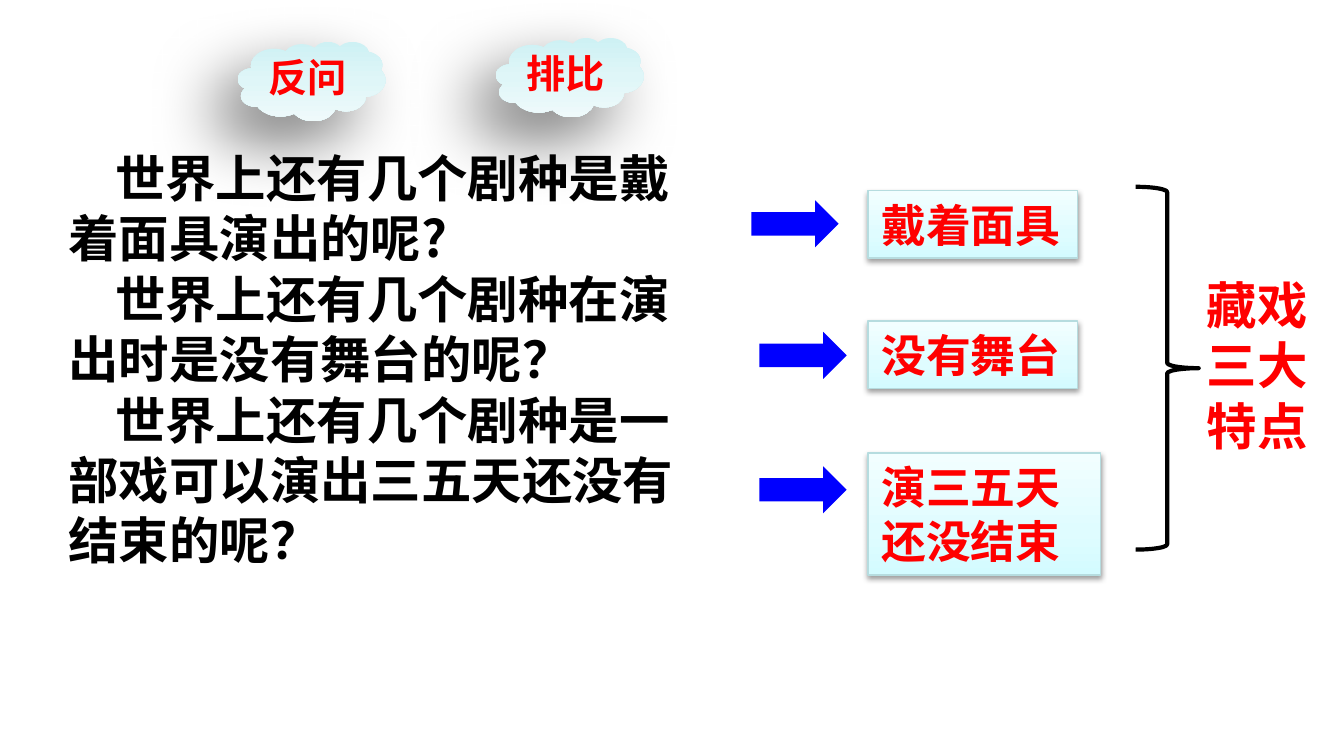
"""Build the slide on the three features of Tibetan opera."""
from dataclasses import dataclass

import lxml.etree
import pptx
import pptx.dml.color
import pptx.enum.shapes
import pptx.enum.text
import pptx.oxml.ns
import pptx.util

Pt = pptx.util.Pt
SHAPE = pptx.enum.shapes.MSO_SHAPE
FONT = "Noto Sans CJK SC"
COLORS = {
    "text": "000000", "accent": "FF0000", "arrow": "0000FF", "edge": "B6DCDF",
    "shadow": "000000",
    "box0": "D3FBFF", "box1": "DFFCFF", "box2": "F2FEFF",
    "cloud0": "CEF1F4", "cloud1": "DFF6F8", "cloud2": "EFFAFB",
}


@dataclass(frozen=True)
class Gradient:
    stops: tuple[tuple[int, str], ...]
    angle: int


@dataclass(frozen=True)
class Shadow:
    alpha: int
    blur: float
    distance: float
    direction: int


@dataclass(frozen=True)
class Feature:
    lines: tuple[str, ...]
    arrow_left: float
    arrow_top: float
    top: float
    width: float
    height: float


@dataclass(frozen=True)
class Cloud:
    label: str
    left: float
    top: float


BOX_FILL = Gradient(((0, "box0"), (35, "box1"), (100, "box2")), 90)
CLOUD_FILL = Gradient(((0, "cloud0"), (50, "cloud1"), (100, "cloud2")), 270)
BOX_SHADOW = Shadow(38, 3.1, 1.6, 90)
CLOUD_SHADOW = Shadow(50, 35, 20, 135)

QUESTIONS = (
    "世界上还有几个剧种是戴着面具演出的呢?",
    "世界上还有几个剧种在演出时是没有舞台的呢？",
    "世界上还有几个剧种是一部戏可以演出三五天还没有结束的呢？",
)
FEATURES = (
    Feature(("戴着面具",), 402.5, 107.3, 102.2, 112.3, 36),
    Feature(("没有舞台",), 406.8, 177.8, 172.1, 112.3, 36),
    Feature(("演三五天", "还没结束"), 406.8, 249.8, 242.6, 124.6, 65.5),
)
CLOUDS = (Cloud("反问", 127.4, 22.3), Cloud("排比", 265.7, 20.2))


def rgb(name: str) -> pptx.dml.color.RGBColor:
    return pptx.dml.color.RGBColor.from_string(COLORS[name])


def add_xml(parent, tag: str, **attrs):
    return lxml.etree.SubElement(
        parent, pptx.oxml.ns.qn(tag), {k: str(v) for k, v in attrs.items()})


def write(sp, lines: tuple[str, ...], size: float, color: str,
          wrap: bool = False, indent: float = 0) -> None:
    tf = sp.text_frame
    tf.word_wrap = wrap
    tf.auto_size = pptx.enum.text.MSO_AUTO_SIZE.NONE
    tf.vertical_anchor = pptx.enum.text.MSO_ANCHOR.TOP
    for i, line in enumerate(lines):
        p = tf.paragraphs[0] if i == 0 else tf.add_paragraph()
        p.alignment = pptx.enum.text.PP_ALIGN.LEFT
        p.line_spacing = Pt(size * 1.2)
        p.space_before = Pt(0)
        pPr = p._p.get_or_add_pPr()
        pPr.set("marL", "0")
        pPr.set("indent", str(Pt(indent)))
        add_xml(pPr, "a:buNone")
        r = p.add_run()
        r.text = line
        r.font.size = Pt(size)
        r.font.bold = True
        r.font.color.rgb = rgb(color)
        r.font.name = FONT
        add_xml(r._r.get_or_add_rPr(), "a:ea", typeface=FONT)


def add_shape(shapes, kind: SHAPE, left: float, top: float, width: float, height: float):
    sp = shapes.add_shape(kind, Pt(left), Pt(top), Pt(width), Pt(height))
    sp.shadow.inherit = False
    sp.line.fill.background()
    return sp


def add_text(shapes, lines: tuple[str, ...], left: float, top: float,
             width: float, height: float, size: float) -> None:
    sp = shapes.add_textbox(Pt(left), Pt(top), Pt(width), Pt(height))
    write(sp, lines, size, "accent")


def decorate(sp, gradient: Gradient, shadow: Shadow) -> None:
    sp.fill.gradient()
    sp.fill.gradient_angle = gradient.angle
    stops = sp._element.spPr.find(".//" + pptx.oxml.ns.qn("a:gsLst"))
    for stop in list(stops):
        stops.remove(stop)
    for position, color in gradient.stops:
        stop = add_xml(stops, "a:gs", pos=position * 1000)
        add_xml(stop, "a:srgbClr", val=COLORS[color])
    effects = sp._element.spPr.find(pptx.oxml.ns.qn("a:effectLst"))
    outer = add_xml(effects, "a:outerShdw", blurRad=Pt(shadow.blur),
                    dist=Pt(shadow.distance), dir=shadow.direction * 60000,
                    rotWithShape=0)
    color = add_xml(outer, "a:srgbClr", val=COLORS["shadow"])
    add_xml(color, "a:alpha", val=shadow.alpha * 1000)


def add_feature(shapes, feature: Feature) -> None:
    arrow = add_shape(shapes, SHAPE.RIGHT_ARROW, feature.arrow_left, feature.arrow_top, 46.8, 25.2)
    arrow.fill.solid()
    arrow.fill.fore_color.rgb = rgb("arrow")
    sp = add_shape(shapes, SHAPE.RECTANGLE, 465.1, feature.top, feature.width, feature.height)
    sp.line.color.rgb = rgb("edge")
    sp.line.width = Pt(0.75)
    decorate(sp, BOX_FILL, BOX_SHADOW)
    write(sp, feature.lines, 24, "accent")


def add_cloud(shapes, cloud: Cloud) -> None:
    group = shapes.add_group_shape()
    sp = add_shape(group.shapes, SHAPE.CLOUD, cloud.left, cloud.top, 79.2, 42.5)
    decorate(sp, CLOUD_FILL, CLOUD_SHADOW)
    add_text(group.shapes, (cloud.label,), cloud.left + 9.4, cloud.top + 2.9, 56.9, 32.4, 21)


def add_questions(s) -> None:
    s.shapes.title._element.getparent().remove(s.shapes.title._element)
    body = s.placeholders[1]
    body.left, body.top, body.width, body.height = Pt(31.7), Pt(75.6), Pt(340.6), Pt(234)
    tf = body.text_frame
    tf.margin_left = tf.margin_right = Pt(5)
    tf.margin_top = tf.margin_bottom = Pt(3)
    write(body, QUESTIONS, 27, "text", wrap=True, indent=25)


def main() -> None:
    prs = pptx.Presentation()
    prs.slide_width, prs.slide_height = Pt(720), Pt(405)
    s = prs.slides.add_slide(prs.slide_layouts[1])
    add_questions(s)
    for feature in FEATURES:
        add_feature(s.shapes, feature)
    brace = add_shape(s.shapes, SHAPE.RIGHT_BRACE, 608.4, 100.1, 33.8, 194.4)
    brace.fill.background()
    brace.line.color.rgb = rgb("text")
    brace.line.width = Pt(2.25)
    add_text(s.shapes, ("藏戏", "三大", "特点"), 639.4, 143.3, 69.1, 105.1, 27)
    for cloud in CLOUDS:
        add_cloud(s.shapes, cloud)
    prs.save("out.pptx")


if __name__ == "__main__":
    main()
